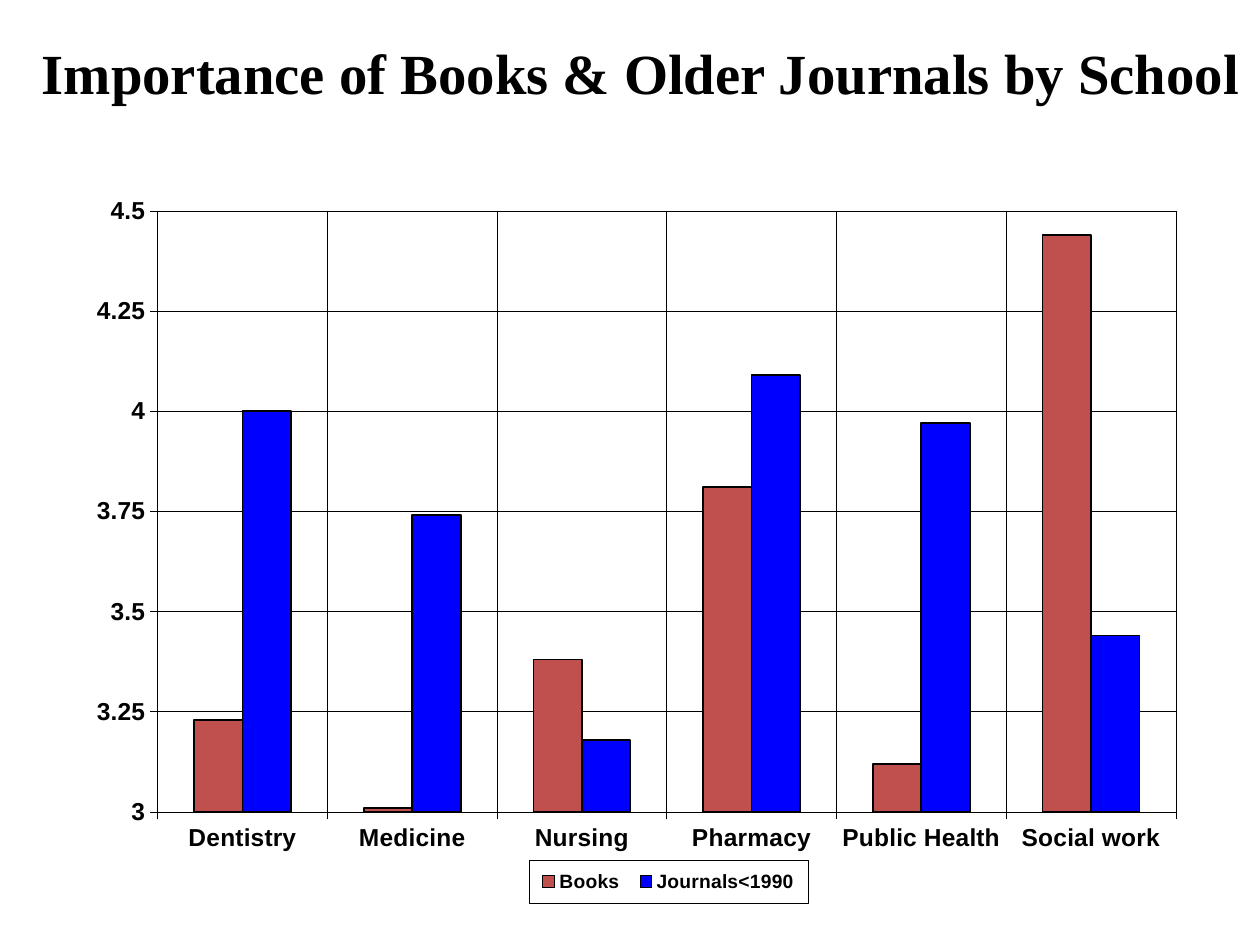
"""Build a slide comparing the importance of books and older journals by school."""
from lxml import etree
from pptx import Presentation
from pptx.chart import data
from pptx.dml.color import RGBColor
from pptx.enum import chart as ec, text
from pptx.oxml import parse_xml
from pptx.oxml.ns import nsdecls, qn
from pptx.util import Inches, Pt

BLACK = RGBColor(0, 0, 0)
RED = RGBColor(0xC0, 0x50, 0x4D)
BLUE = RGBColor(0, 0, 0xFF)

TITLE = "Importance of Books & Older Journals by School"
SCHOOLS = ["Dentistry", "Medicine", "Nursing", "Pharmacy", "Public Health", "Social work"]
RATINGS = [
    ("Books", RED, [3.23, 3.01, 3.38, 3.81, 3.12, 4.44]),
    ("Journals<1990", BLUE, [4, 3.74, 3.18, 4.09, 3.97, 3.44]),
]
PLOT_BOX = (0.078, 0.02, 0.911, 0.846)
LEGEND_BOX = (0.41, 0.934, 0.25, 0.06)


def style_font(font, size, bold=True, name="Arial"):
    font.name, font.size, font.bold = name, Pt(size), bold
    font.color.rgb = BLACK


def style_line(line, width):
    line.color.rgb = BLACK
    line.width = Pt(width)


def make_layout(box, inner=False):
    layout = etree.Element(qn("c:layout"))
    manual = etree.SubElement(layout, qn("c:manualLayout"))
    settings = [("layoutTarget", "inner")] if inner else []
    settings += [("xMode", "edge"), ("yMode", "edge")]
    settings += zip("xywh", box)
    for tag, value in settings:
        etree.SubElement(manual, qn(f"c:{tag}")).set("val", str(value))
    return layout


def drop_layout(parent):
    for old in parent.findall(qn("c:layout")):
        parent.remove(old)


def add_title(slide):
    heading = slide.shapes.add_textbox(Inches(0.17), Inches(0.3), Inches(9.83), Inches(0.95))
    frame = heading.text_frame
    frame.word_wrap = True
    frame.margin_top = frame.margin_bottom = 0
    frame.vertical_anchor = text.MSO_ANCHOR.TOP
    frame.text = TITLE
    line = frame.paragraphs[0]
    line.alignment = text.PP_ALIGN.CENTER
    style_font(line.runs[0].font, 32.4, name="Times New Roman")


def style_axis(axis):
    axis.major_tick_mark = ec.XL_TICK_MARK.CROSS
    axis.minor_tick_mark = ec.XL_TICK_MARK.NONE
    axis.has_major_gridlines = True
    style_line(axis.major_gridlines.format.line, 0.25)
    style_line(axis.format.line, 0.25)
    style_font(axis.tick_labels.font, 14)


def add_ratings(slide):
    ratings = data.CategoryChartData()
    ratings.categories = SCHOOLS
    for name, _, values in RATINGS:
        ratings.add_series(name, values)
    chart = slide.shapes.add_chart(
        ec.XL_CHART_TYPE.COLUMN_CLUSTERED,
        Inches(0.56), Inches(1.56), Inches(8.87), Inches(5.64), ratings,
    ).chart
    chart.has_title = False
    style_font(chart.font, 10, bold=False)

    plot = chart.plots[0]
    plot.vary_by_categories = False
    plot.gap_width, plot.overlap = 150, 0
    for series, (_, color, _) in zip(plot.series, RATINGS):
        series.format.fill.solid()
        series.format.fill.fore_color.rgb = color
        series.invert_if_negative = False
        style_line(series.format.line, 1)

    for axis in (chart.category_axis, chart.value_axis):
        style_axis(axis)
    scale = chart.value_axis
    scale.minimum_scale, scale.maximum_scale, scale.major_unit = 3, 4.5, 0.25
    scale.tick_labels.number_format = "General"
    scale.tick_labels.number_format_is_linked = False

    area = chart._chartSpace.chart.plotArea
    drop_layout(area)
    area.insert(0, make_layout(PLOT_BOX, inner=True))
    area.append(parse_xml(
        f'<c:spPr {nsdecls("c", "a")}><a:solidFill><a:srgbClr val="FFFFFF"/></a:solidFill></c:spPr>'
    ))

    chart.has_legend = True
    legend = chart.legend
    legend.position = ec.XL_LEGEND_POSITION.BOTTOM
    legend.include_in_layout = False
    style_font(legend.font, 11)
    key = legend._element
    drop_layout(key)
    key.find(qn("c:legendPos")).addnext(make_layout(LEGEND_BOX))
    key.find(qn("c:txPr")).addprevious(parse_xml(
        f'<c:spPr {nsdecls("c", "a")}><a:ln w="3175"><a:solidFill>'
        '<a:srgbClr val="000000"/></a:solidFill></a:ln></c:spPr>'
    ))


def main():
    deck = Presentation()
    deck.slide_width, deck.slide_height = Inches(10), Inches(7.5)
    slide = deck.slides.add_slide(deck.slide_layouts[6])
    add_title(slide)
    add_ratings(slide)
    deck.save("out.pptx")


if __name__ == "__main__":
    main()
